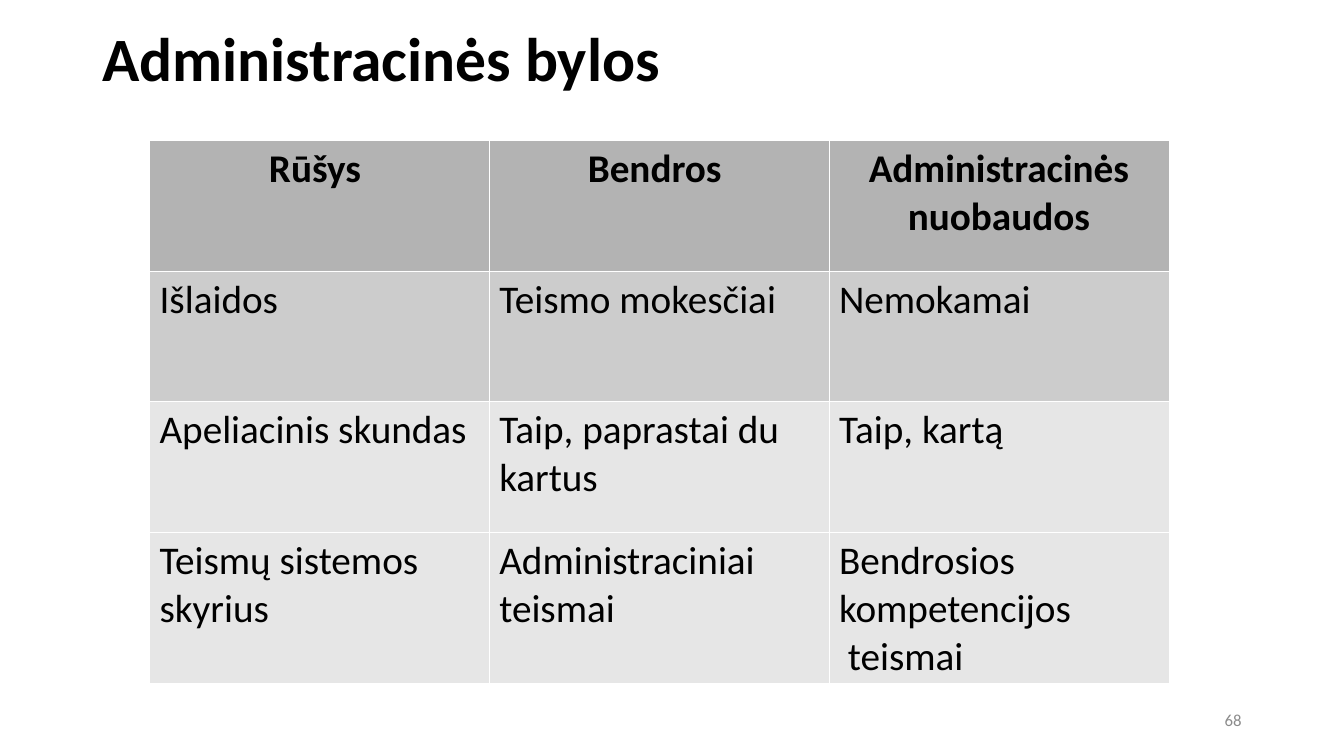
from lxml import etree
from pptx import Presentation
from pptx.dml.color import RGBColor
from pptx.enum import text
from pptx.oxml import ns
from pptx.util import Pt

FONT = "Calibri"
HEADER = ("Rūšys ", "Bendros ", "Administracinės nuobaudos")
BODY = (
    ("Išlaidos", "Teismo mokesčiai", "Nemokamai"),
    ("Apeliacinis skundas", "Taip, paprastai du kartus", "Taip, kartą"),
    ("Teismų sistemos skyrius", "Administraciniai teismai",
     "Bendrosios kompetencijos\n teismai"),
)
ROW_FILLS = ("B3B3B3", "CCCCCC", "E6E6E6", "E6E6E6")


def color(value):
    """Return the colour for a hex string."""
    return RGBColor.from_string(value)


def write(frame, content, size, fill="000000", bold=False, align=text.PP_ALIGN.LEFT):
    """Write each line of content as a paragraph of one run."""
    for index, line in enumerate(content.split("\n")):
        paragraph = frame.add_paragraph() if index else frame.paragraphs[0]
        paragraph.alignment = align
        run = paragraph.add_run()
        run.text = line
        run.font.name = FONT
        run.font.size = Pt(size)
        run.font.bold = bold
        run.font.color.rgb = color(fill)


def add_label(slide, box, content, size, **style):
    """Add a wrapped, vertically centred text box and return its frame."""
    frame = slide.shapes.add_textbox(*map(Pt, box)).text_frame
    frame.word_wrap = True
    frame.vertical_anchor = text.MSO_ANCHOR.MIDDLE
    write(frame, content, size, **style)
    return frame


def add_borders(cell, value, width):
    """Draw a solid line on every side of a cell."""
    properties = cell._tc.get_or_add_tcPr()
    for side in "LRTB":
        line = etree.SubElement(properties, ns.qn(f"a:ln{side}"), w=str(Pt(width)))
        fill = etree.SubElement(line, ns.qn("a:solidFill"))
        etree.SubElement(fill, ns.qn("a:srgbClr"), val=value)


def add_case_table(slide, box):
    """Add the table that compares the kinds of cases."""
    rows = (HEADER, *BODY)
    table = slide.shapes.add_table(len(rows), len(HEADER), *map(Pt, box)).table
    table.first_row = False
    table.horz_banding = False
    for row_index, (row, fill) in enumerate(zip(rows, ROW_FILLS)):
        is_header = row_index == 0
        align = text.PP_ALIGN.CENTER if is_header else text.PP_ALIGN.LEFT
        for column_index, content in enumerate(row):
            cell = table.cell(row_index, column_index)
            add_borders(cell, "FFFFFF", 0.06)
            cell.fill.solid()
            cell.fill.fore_color.rgb = color(fill)
            write(cell.text_frame, content, 28, bold=is_header, align=align)


def main():
    """Build and save the slide."""
    presentation = Presentation()
    presentation.slide_width, presentation.slide_height = Pt(960), Pt(540)
    slide = presentation.slides.add_slide(presentation.slide_layouts[6])
    title = add_label(slide, (66, -8, 828, 104), "Administracinės bylos", 44, bold=True)
    title.paragraphs[0].line_spacing = 0.9
    add_label(slide, (678, 500.5, 216, 28), "68", 12, fill="8B8B8B",
              align=text.PP_ALIGN.RIGHT)
    add_case_table(slide, (106.8, 100.4, 728.1, 372.8))
    presentation.save("out.pptx")


if __name__ == "__main__":
    main()
